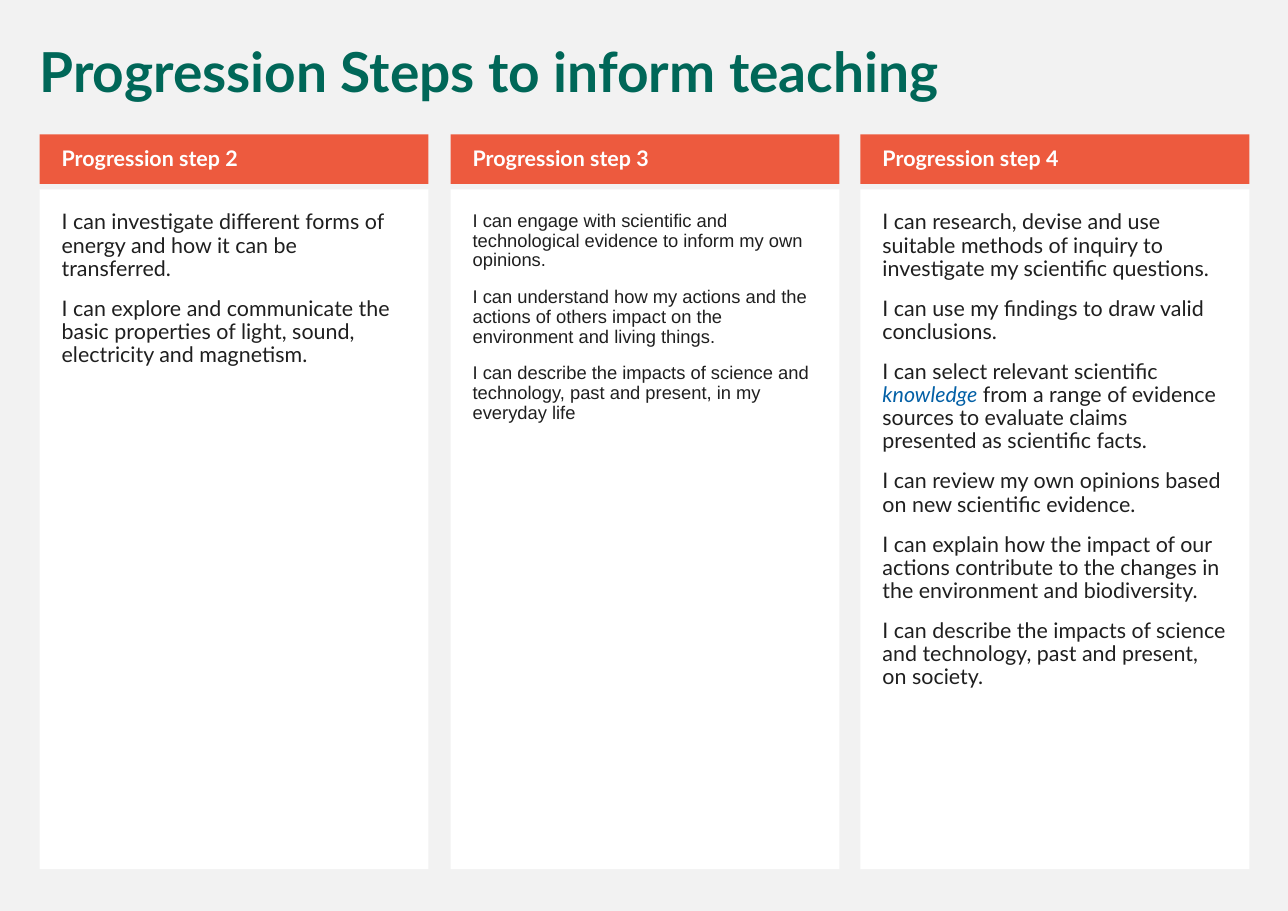
import pptx
import pptx.dml.color
import pptx.enum.shapes
import pptx.enum.text
import pptx.util

EMU_PER_PX = 9144
BACKGROUND, ORANGE, WHITE = "F2F2F2", "ED5A3E", "FFFFFF"
GREEN, INK, BLUE = "006758", "1F1F1F", "0360A6"
COLUMN_WIDTH = 353

COLUMNS = [
    (36, "Progression step 2", {}, [
        "I can investigate different forms of energy and how it can be transferred.",
        "I can explore and communicate the basic properties of light, sound, electricity and magnetism.",
    ]),
    (409, "Progression step 3", {"font": "Arial", "size": 12}, [
        "I can engage with scientific and technological evidence to inform my own opinions.",
        "I can understand how my actions and the actions of others impact on the environment and living things.",
        "I can describe the impacts of science and technology, past and present, in my everyday life",
    ]),
    (781, "Progression step 4", {}, [
        "I can research, devise and use suitable methods of inquiry to investigate my scientific questions.",
        "I can use my findings to draw valid conclusions.",
        [
            ("I can select relevant scientific ", {}),
            ("knowledge", {"color": BLUE, "italic": True}),
            (" from a range of evidence sources to evaluate claims presented as scientific facts.", {}),
        ],
        "I can review my own opinions based on new scientific evidence.",
        "I can explain how the impact of our actions contribute to the changes in the environment and biodiversity.",
        "I can describe the impacts of science and technology, past and present, on society.",
    ]),
]


def px(length):
    return pptx.util.Emu(length * EMU_PER_PX)


def rgb(color):
    return pptx.dml.color.RGBColor.from_string(color)


def add_run(paragraph, text, font="Lato", size=14, color=INK, bold=False, italic=False):
    run = paragraph.add_run()
    run.text = text
    run.font.name = font
    run.font.size = pptx.util.Pt(size)
    run.font.color.rgb = rgb(color)
    run.font.bold = bold
    run.font.italic = italic


class SlideBuilder:
    """Draws text boxes and filled panels on one slide in a shared style."""

    def __init__(self, slide):
        self.slide = slide
        self.line_spacing = 0.9
        self.space_before = pptx.util.Pt(11)

    def background(self, color):
        fill = self.slide.background.fill
        fill.solid()
        fill.fore_color.rgb = rgb(color)

    def fill_text(self, shape, paragraphs, insets, anchor, **style):
        frame = shape.text_frame
        frame.word_wrap = True
        frame.vertical_anchor = anchor
        (frame.margin_left, frame.margin_top,
         frame.margin_right, frame.margin_bottom) = map(px, insets)
        for index, content in enumerate(paragraphs):
            paragraph = frame.add_paragraph() if index else frame.paragraphs[0]
            paragraph.alignment = pptx.enum.text.PP_ALIGN.LEFT
            paragraph.line_spacing = self.line_spacing
            paragraph.space_before = self.space_before
            runs = [(content, {})] if isinstance(content, str) else content
            for text, changes in runs:
                add_run(paragraph, text, **{**style, **changes})

    def text(self, box, paragraphs, **style):
        shape = self.slide.shapes.add_textbox(*map(px, box))
        self.fill_text(shape, paragraphs, (10, 5, 10, 5), pptx.enum.text.MSO_ANCHOR.TOP, **style)

    def panel(self, box, fill, paragraphs, insets, anchor, **style):
        shape = self.slide.shapes.add_shape(
            pptx.enum.shapes.MSO_SHAPE.RECTANGLE, *map(px, box))
        shape.shadow.inherit = False
        shape.fill.solid()
        shape.fill.fore_color.rgb = rgb(fill)
        shape.line.fill.background()
        self.fill_text(shape, paragraphs, insets, anchor, **style)


def main():
    presentation = pptx.Presentation()
    presentation.slide_width = px(1169)
    presentation.slide_height = px(827)
    builder = SlideBuilder(presentation.slides.add_slide(presentation.slide_layouts[6]))
    builder.background(BACKGROUND)
    for left, heading, style, statements in COLUMNS:
        builder.panel((left, 172, COLUMN_WIDTH, 617), WHITE, statements,
                      (20, 20, 20, 20), pptx.enum.text.MSO_ANCHOR.TOP, **style)
        builder.panel((left, 122, COLUMN_WIDTH, 45), ORANGE, [heading],
                      (20, 5, 10, 5), pptx.enum.text.MSO_ANCHOR.MIDDLE,
                      color=WHITE, bold=True)
    builder.text((26, 36, 1108, 65), ["Progression Steps to inform teaching"],
                 size=36, color=GREEN, bold=True)
    presentation.save("out.pptx")


if __name__ == "__main__":
    main()
